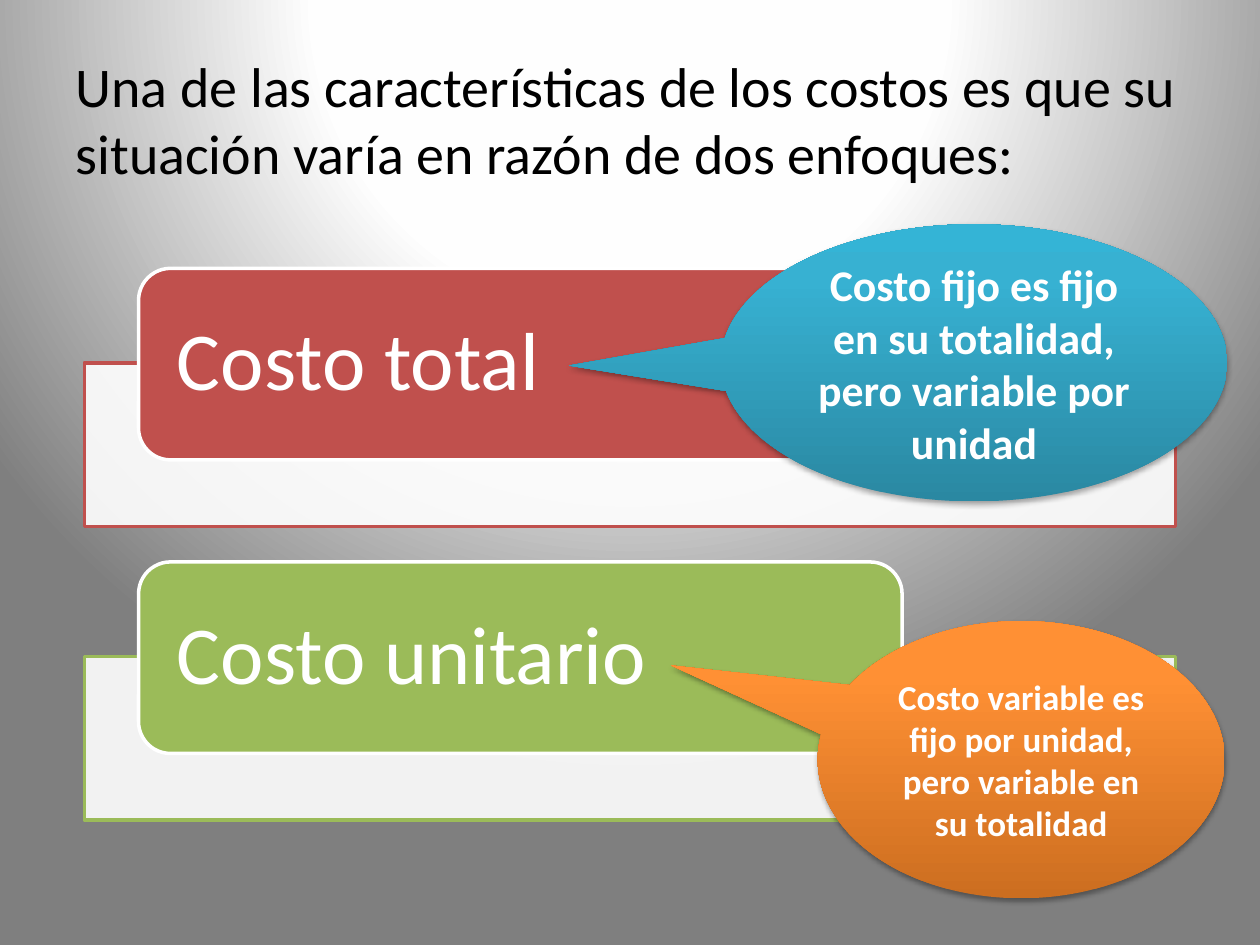
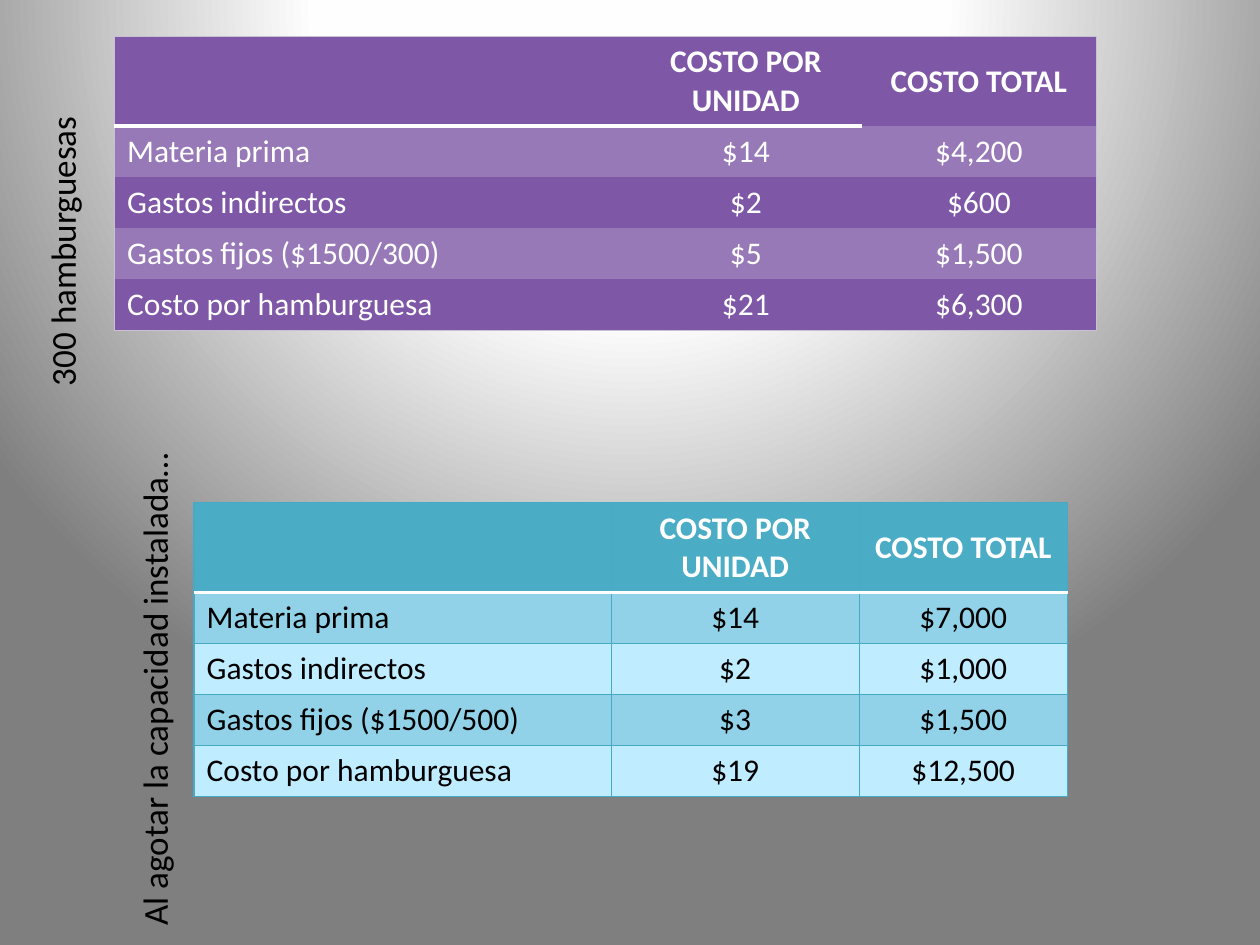
from lxml import etree
from pptx import Presentation
from pptx.dml.color import RGBColor
from pptx.enum import shapes, text
from pptx.oxml import ns
from pptx.util import Inches, Pt

FONT = "Calibri"
BLACK = RGBColor(0x00, 0x00, 0x00)
WHITE = RGBColor(0xFF, 0xFF, 0xFF)
RED = RGBColor(0xC0, 0x50, 0x4D)
GREEN = RGBColor(0x9B, 0xBB, 0x59)
PURPLE = RGBColor(0x7E, 0x57, 0xA6)
LILAC = RGBColor(0x98, 0x79, 0xB8)
LILAC_LINE = RGBColor(0xC8, 0xC1, 0xD3)
TEAL = RGBColor(0x4B, 0xAC, 0xC6)
TEAL_LINE = RGBColor(0x46, 0xAA, 0xC5)
SKY = RGBColor(0x91, 0xD2, 0xE8)
PALE_SKY = RGBColor(0xBF, 0xEC, 0xFF)

BACKDROP = [(0, WHITE), (40, RGBColor(0xFE, 0xFE, 0xFE)), (100, RGBColor(0x7F, 0x7F, 0x7F))]
BLUE_GLOSS = [(0, RGBColor(0x2A, 0x88, 0xA2)), (80, RGBColor(0x37, 0xB1, 0xD2)),
              (100, RGBColor(0x34, 0xB4, 0xD6))]
ORANGE_GLOSS = [(0, RGBColor(0xCC, 0x6E, 0x20)), (80, RGBColor(0xFF, 0x90, 0x34)),
                (100, RGBColor(0xFF, 0x91, 0x36))]

HEADINGS = ["", "COSTO POR UNIDAD", "COSTO TOTAL"]
HEADER_HEIGHT, ROW_HEIGHT = 0.71, 0.4


def add_node(parent, tag, **attributes):
    node = etree.SubElement(parent, ns.qn(tag))
    for name, value in attributes.items():
        node.set(name, str(value))
    return node


def add_color(parent, color, alpha=None):
    node = add_node(parent, "a:srgbClr", val=color)
    if alpha is not None:
        add_node(node, "a:alpha", val=alpha * 1000)


def swap_in_gradient(properties, stops, angle=None):
    """Replace a solid fill by a linear gradient, or a circular one if no angle is given."""
    solid = properties.find(ns.qn("a:solidFill"))
    gradient = etree.Element(ns.qn("a:gradFill"), rotWithShape="1")
    stop_list = add_node(gradient, "a:gsLst")
    for position, color in stops:
        add_color(add_node(stop_list, "a:gs", pos=position * 1000), color)
    if angle is None:
        circle = add_node(gradient, "a:path")
        circle.set("path", "circle")
        add_node(circle, "a:fillToRect", l=50000, t=-80000, r=50000, b=180000)
    else:
        add_node(gradient, "a:lin", ang=angle * 60000, scaled=0)
    properties.replace(solid, gradient)


class Deck:
    def __init__(self):
        self.presentation = Presentation()
        self.presentation.slide_width = Inches(10)
        self.presentation.slide_height = Inches(7.5)
        self.slide = None
        master = self.presentation.slide_master
        master.background.fill.solid()
        master.background.fill.fore_color.rgb = WHITE
        swap_in_gradient(master.element.xpath("p:cSld/p:bg/p:bgPr")[0], BACKDROP)

    def start_slide(self, layout_index):
        layout = self.presentation.slide_layouts[layout_index]
        self.slide = self.presentation.slides.add_slide(layout)

    def add_words(self, frame, words, size, color, bold=False, align=text.PP_ALIGN.LEFT):
        paragraph = frame.paragraphs[0]
        paragraph.alignment = align
        run = paragraph.add_run()
        run.text = words
        run.font.name = FONT
        run.font.size = Pt(size)
        run.font.bold = bold
        run.font.color.rgb = color
        return paragraph

    def placeholder(self, index, box, words, size, rotation=0):
        """Fill a title or body placeholder with one unbulleted paragraph."""
        shape = self.slide.placeholders[index]
        shape.left, shape.top, shape.width, shape.height = map(Inches, box)
        shape.rotation = rotation
        frame = shape.text_frame
        frame.word_wrap = True
        frame.auto_size = text.MSO_AUTO_SIZE.NONE
        frame.vertical_anchor = text.MSO_ANCHOR.TOP
        paragraph = self.add_words(frame, words, size, BLACK)
        paragraph.space_before = Pt(0)
        properties = paragraph._p.get_or_add_pPr()
        properties.set("marL", "0")
        properties.set("indent", "0")
        add_node(properties, "a:buNone")

    def shape(self, kind, box, fill, line=None):
        shape = self.slide.shapes.add_shape(kind, *map(Inches, box))
        shape.shadow.inherit = False
        shape.fill.solid()
        shape.fill.fore_color.rgb = fill
        if line is None:
            shape.line.fill.background()
        else:
            shape.line.color.rgb = line
            shape.line.width = Pt(2)
        return shape

    def cost_panel(self, top, label, color):
        """Draw a rounded label that overlaps the top of an outlined bar."""
        bar = self.shape(shapes.MSO_SHAPE.RECTANGLE, (0.67, top + 0.75, 8.66, 1.3), WHITE, color)
        fill_color = bar.element.spPr.find(ns.qn("a:solidFill"))[0]
        add_node(fill_color, "a:alpha", val=90000)
        tab = self.shape(shapes.MSO_SHAPE.ROUNDED_RECTANGLE, (1.1, top, 6.06, 1.52), color, WHITE)
        frame = tab.text_frame
        frame.margin_left = frame.margin_right = Inches(0.23)
        frame.margin_top = frame.margin_bottom = 0
        self.add_words(frame, label, 47, WHITE).line_spacing = 0.9

    def callout(self, box, pointer, stops, words, size):
        shape = self.shape(shapes.MSO_SHAPE.OVAL_CALLOUT, box, stops[0][1])
        shape.adjustments[0], shape.adjustments[1] = pointer
        properties = shape.element.spPr
        swap_in_gradient(properties, stops, 270)
        shadow = add_node(properties.find(ns.qn("a:effectLst")), "a:outerShdw",
                          blurRad=Pt(3.1), dist=Pt(1.8), dir=90 * 60000, rotWithShape=0)
        add_color(shadow, BLACK, 35)
        self.add_words(shape.text_frame, words, size, WHITE, True, text.PP_ALIGN.CENTER)

    def cell_borders(self, cell, borders):
        """Set the L, R, T and B borders; each is (colour, points) or None."""
        properties = cell._tc.get_or_add_tcPr()
        for position, side in enumerate("LRTB"):
            line = etree.Element(ns.qn("a:ln" + side))
            if borders[side]:
                color, width = borders[side]
                line.set("w", str(Pt(width)))
                add_color(add_node(line, "a:solidFill"), color)
            else:
                add_node(line, "a:noFill")
            properties.insert(position, line)

    def cost_table(self, left, top, widths, rows, fills, ink, edge, inner, rule, ruled_columns):
        """fills are header, odd and even rows; inner and rule are (colour, points)."""
        rows = [HEADINGS] + rows
        height = HEADER_HEIGHT + ROW_HEIGHT * (len(rows) - 1)
        frame = self.slide.shapes.add_table(
            len(rows), len(widths), *map(Inches, (left, top, sum(widths), height)))
        table = frame.table
        table.horz_banding = False
        for column, width in zip(table.columns, widths):
            column.width = Inches(width)
        for r, values in enumerate(rows):
            table.rows[r].height = Inches(ROW_HEIGHT if r else HEADER_HEIGHT)
            for c, value in enumerate(values):
                cell = table.cell(r, c)
                cell.vertical_anchor = text.MSO_ANCHOR.MIDDLE
                cell.fill.solid()
                cell.fill.fore_color.rgb = fills[0] if r == 0 else fills[2 - r % 2]
                if value:
                    align = text.PP_ALIGN.CENTER if c else text.PP_ALIGN.LEFT
                    self.add_words(cell.text_frame, value, 18, ink if r else WHITE, r == 0, align)
                header_rule = rule if c < ruled_columns else inner
                self.cell_borders(cell, {
                    "L": inner if c else edge,
                    "R": inner if c < len(widths) - 1 else edge,
                    "T": edge if r == 0 else header_rule if r == 1 else inner,
                    "B": header_rule if r == 0 else inner if r < len(rows) - 1 else edge})


def build_approaches(deck):
    deck.start_slide(5)
    deck.placeholder(0, (0.5, 0.36, 9, 1.34),
                     "Una de las características de los costos es que su "
                     "situación varía en razón de dos enfoques:", 32)
    deck.cost_panel(2.13, "Costo total", RED)
    deck.cost_panel(4.46, "Costo unitario", GREEN)
    deck.callout((5.72, 1.78, 4.02, 2.2), (-0.8, 0.01), BLUE_GLOSS,
                 "Costo fijo es fijo en su totalidad, pero variable por unidad", 25)
    deck.callout((6.49, 4.93, 3.23, 2.2), (-0.86, -0.34), ORANGE_GLOSS,
                 "Costo variable es fijo por unidad, pero variable en su totalidad", 20)


def build_burger_costs(deck):
    deck.start_slide(3)
    title = deck.slide.shapes.title.element
    title.getparent().remove(title)
    deck.placeholder(1, (-0.89, 1.29, 3.04, 0.71), "300 hamburguesas", 20, 270)
    deck.placeholder(2, (-0.75, 4.98, 4.22, 0.71), "Al agotar la capacidad instalada…", 20, 270)
    deck.cost_table(
        0.91, 0.29, [4.09, 1.84, 1.86],
        [["Materia prima", "$14", "$4,200"],
         ["Gastos indirectos", "$2", "$600"],
         ["Gastos fijos ($1500/300)", "$5", "$1,500"],
         ["Costo por hamburguesa", "$21", "$6,300"]],
        fills=(PURPLE, LILAC, PURPLE), ink=WHITE, edge=(LILAC_LINE, 0.75),
        inner=None, rule=(WHITE, 3), ruled_columns=2)
    deck.cost_table(
        1.54, 3.99, [3.31, 1.97, 1.65],
        [["Materia prima", "$14", "$7,000"],
         ["Gastos indirectos", "$2", "$1,000"],
         ["Gastos fijos ($1500/500)", "$3", "$1,500"],
         ["Costo por hamburguesa", "$19", "$12,500"]],
        fills=(TEAL, SKY, PALE_SKY), ink=BLACK, edge=(TEAL_LINE, 0.75),
        inner=(TEAL_LINE, 0.75), rule=(WHITE, 2), ruled_columns=3)


def main():
    deck = Deck()
    build_approaches(deck)
    build_burger_costs(deck)
    deck.presentation.save("out.pptx")


if __name__ == "__main__":
    main()
